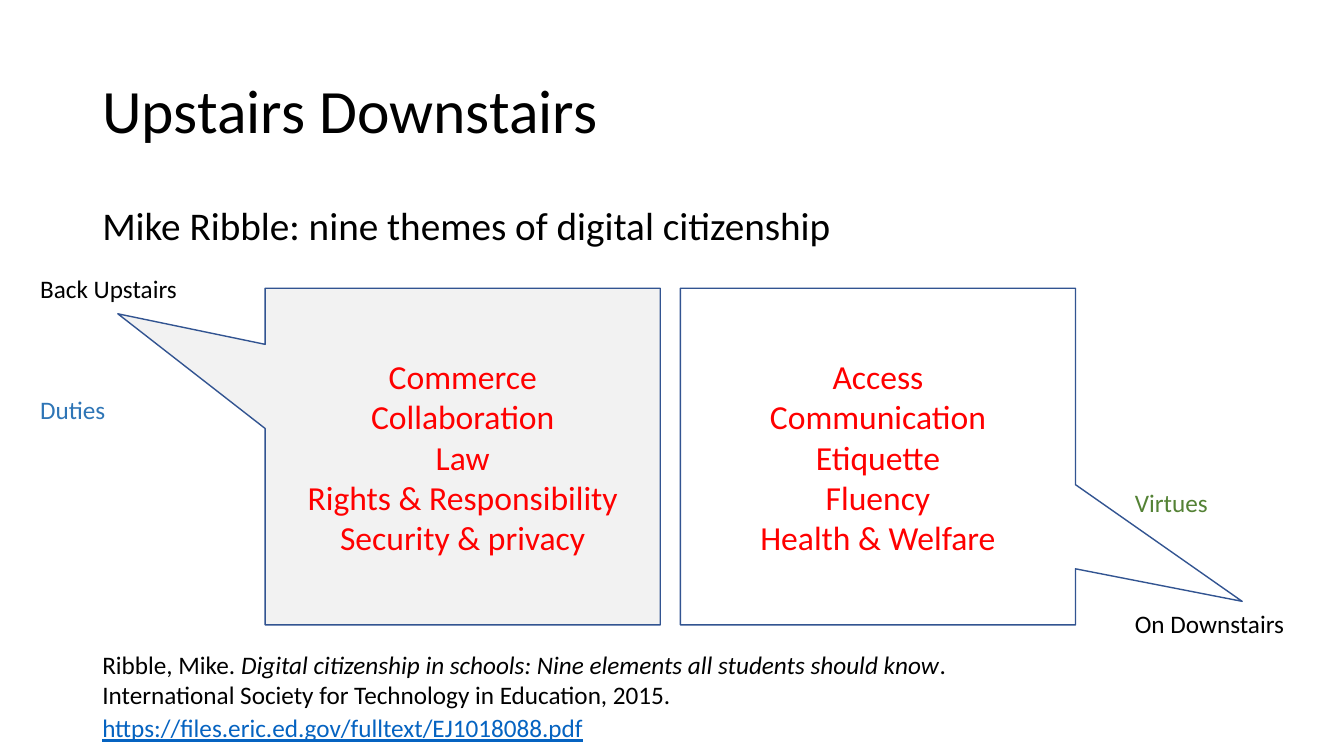
import pptx
import pptx.util
import pptx.dml.color
import pptx.enum.shapes
import pptx.enum.text

Pt = pptx.util.Pt
ANCHOR = pptx.enum.text.MSO_ANCHOR
ALIGN = pptx.enum.text.PP_ALIGN
COLORS = {
    "black": "000000",
    "red": "FF0000",
    "blue": "2E75B6",
    "green": "548235",
    "link": "0563C1",
    "panel": "F2F2F2",
    "outline": "325491",
}


def rgb(name):
    return pptx.dml.color.RGBColor.from_string(COLORS[name])


def add_text(text, paragraph, size=18, color="black", italic=False, underline=False):
    run = paragraph.add_run()
    run.text = text
    run.font.name = "Calibri"
    run.font.size = Pt(size)
    run.font.color.rgb = rgb(color)
    run.font.italic = italic
    run.font.underline = underline


presentation = pptx.Presentation()
presentation.slide_width = Pt(960)
presentation.slide_height = Pt(540)
slide = presentation.slides.add_slide(presentation.slide_layouts[6])

margin = 66
headings = [
    ("Upstairs Downstairs", 28.8, 104.4, 44, ANCHOR.MIDDLE),
    ("Mike Ribble: nine themes of digital citizenship", 144, 342.7, 28, ANCHOR.TOP),
]
for text, top, height, size, anchor in headings:
    frame = slide.shapes.add_textbox(Pt(margin), Pt(top), Pt(828), Pt(height)).text_frame
    frame.word_wrap = True
    frame.vertical_anchor = anchor
    frame.paragraphs[0].line_spacing = 0.9
    add_text(text, frame.paragraphs[0], size=size)

callouts = [
    (189.4, (-0.873, -0.424), "panel",
     ["Commerce", "Collaboration", "Law", "Rights & Responsibility", "Security & privacy"]),
    (486, (0.922, 0.43), None,
     ["Access", "Communication", "Etiquette", "Fluency", "Health & Welfare"]),
]
for left, pointer, fill, themes in callouts:
    shape = slide.shapes.add_shape(
        pptx.enum.shapes.MSO_SHAPE.RECTANGULAR_CALLOUT,
        Pt(left), Pt(205.9), Pt(282.2), Pt(240.5))
    shape.shadow.inherit = False
    shape.adjustments[0], shape.adjustments[1] = pointer
    if fill:
        shape.fill.solid()
        shape.fill.fore_color.rgb = rgb(fill)
    else:
        shape.fill.background()
    shape.line.color.rgb = rgb("outline")
    shape.line.width = Pt(1)
    frame = shape.text_frame
    frame.word_wrap = True
    frame.vertical_anchor = ANCHOR.MIDDLE
    for index, theme in enumerate(themes):
        paragraph = frame.add_paragraph() if index else frame.paragraphs[0]
        paragraph.alignment = ALIGN.CENTER
        add_text(theme, paragraph, size=24, color="red")

side_labels = [
    (21.6, 191.5, ("Back Upstairs", "black"), ("Duties", "blue")),
    (803.5, 344.2, ("Virtues", "green"), ("On Downstairs", "black")),
]
for left, top, upper, lower in side_labels:
    frame = slide.shapes.add_textbox(Pt(left), Pt(top), Pt(128.9), Pt(116.6)).text_frame
    frame.word_wrap = True
    add_text(upper[0], frame.paragraphs[0], color=upper[1])
    paragraph = frame.add_paragraph()
    paragraph.space_before = Pt(65)
    add_text(lower[0], paragraph, color=lower[1])

references = [
    (505.4, 480.2, 28.8, [
        ("https://files.eric.ed.gov/fulltext/EJ1018088.pdf", {"color": "link", "underline": True}),
    ]),
    (460, 663.1, 51.1, [
        ("Ribble, Mike. ", {}),
        ("Digital citizenship in schools: Nine elements all students should know", {"italic": True}),
        (". International Society for Technology in Education, 2015.", {}),
    ]),
]
for top, width, height, parts in references:
    frame = slide.shapes.add_textbox(Pt(margin), Pt(top), Pt(width), Pt(height)).text_frame
    frame.word_wrap = True
    for text, style in parts:
        add_text(text, frame.paragraphs[0], **style)

presentation.save("out.pptx")
